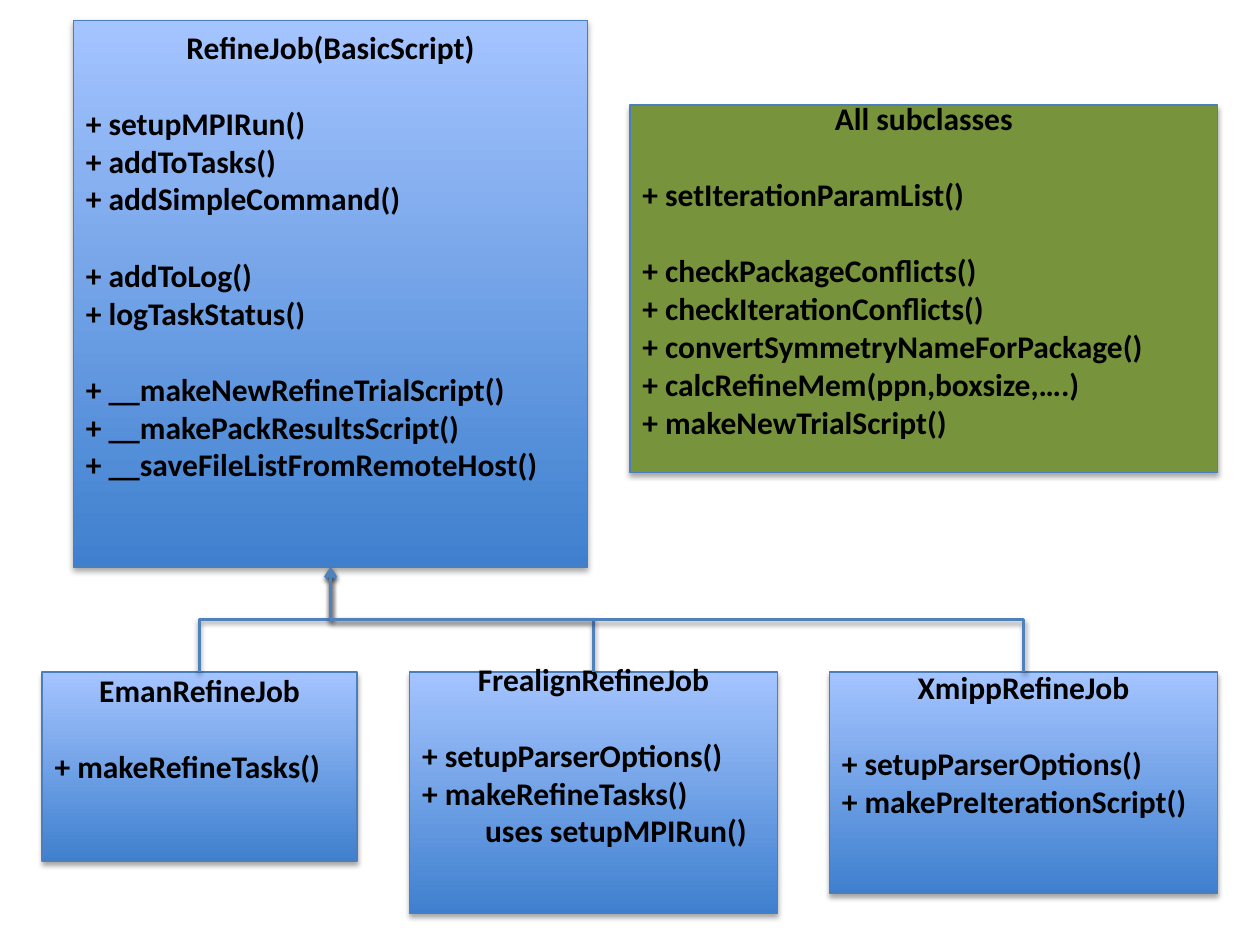
import dataclasses

import lxml.etree
import pptx
import pptx.dml.color
import pptx.enum.shapes
import pptx.enum.text
import pptx.oxml.ns
import pptx.util

Cm = pptx.util.Cm
Pt = pptx.util.Pt
COLOURS = {
    "deep": "3F80CE",
    "pale": "A4C4FF",
    "green": "77933C",
    "border": "4B7EBC",
    "link": "4F81BD",
    "text": "000000",
    "shadow": "000000",
}
FONT = "Calibri"
TEXT_SIZE = Pt(18)
BLANK_LINE = Pt(22)
INSET = Cm(0.13)
TOP_SITE, BOTTOM_SITE = 0, 2


@dataclasses.dataclass(frozen=True)
class ClassBox:
    title: str
    left: float
    top: float
    width: float
    height: float
    groups: tuple[tuple[str, ...], ...]
    lines_below: int = 2
    fill: str = ""


PARENT = ClassBox(
    "RefineJob(BasicScript)", 1.48, 0.42, 10.37, 11.01,
    (
        ("+ setupMPIRun()", "+ addToTasks()", "+ addSimpleCommand()"),
        ("+ addToLog()", "+ logTaskStatus()"),
        (
            "+ __makeNewRefineTrialScript()",
            "+ __makePackResultsScript()",
            "+ __saveFileListFromRemoteHost()",
        ),
    ),
)
CHILD_TOP = 13.55
CHILDREN = (
    ClassBox(
        "FrealignRefineJob", 8.26, CHILD_TOP, 7.41, 4.87,
        (("+ setupParserOptions()", "+ makeRefineTasks()", "\tuses setupMPIRun()"),),
    ),
    ClassBox(
        "EmanRefineJob", 0.85, CHILD_TOP, 6.35, 3.81,
        (("+ makeRefineTasks()",),),
    ),
    ClassBox(
        "XmippRefineJob", 16.72, CHILD_TOP, 7.83, 4.45,
        (("+ setupParserOptions()", "+ makePreIterationScript()"),),
    ),
)
SHARED = ClassBox(
    "All subclasses", 12.7, 2.12, 11.85, 7.41,
    (
        ("+ setIterationParamList()",),
        (
            "+ checkPackageConflicts()",
            "+ checkIterationConflicts()",
            "+ convertSymmetryNameForPackage()",
            "+ calcRefineMem(ppn,boxsize,….)",
            "+ makeNewTrialScript()",
        ),
    ),
    lines_below=1,
    fill="green",
)


def colour(name: str) -> pptx.dml.color.RGBColor:
    return pptx.dml.color.RGBColor.from_string(COLOURS[name])


def add_shadow(item, distance: float, opacity: int) -> None:
    tag = pptx.oxml.ns.qn
    properties = item._element.spPr
    effects = properties.find(tag("a:effectLst"))
    if effects is None:
        effects = lxml.etree.SubElement(properties, tag("a:effectLst"))
    shadow = lxml.etree.SubElement(
        effects, tag("a:outerShdw"), blurRad=str(Pt(3.1)), dist=str(Pt(distance)),
        dir="5400000", rotWithShape="0",
    )
    tint = lxml.etree.SubElement(shadow, tag("a:srgbClr"), val=COLOURS["shadow"])
    lxml.etree.SubElement(tint, tag("a:alpha"), val=str(opacity * 1000))


def write_text(shape, content: ClassBox) -> None:
    frame = shape.text_frame
    frame.word_wrap = True
    frame.vertical_anchor = pptx.enum.text.MSO_ANCHOR.MIDDLE
    frame.margin_top = INSET
    frame.margin_bottom = INSET + content.lines_below * BLANK_LINE
    lines = [content.title] + [line for group in content.groups for line in group]
    starts = {group[0] for group in content.groups}
    frame.text = "\n".join(lines)
    for index, (para, line) in enumerate(zip(frame.paragraphs, lines)):
        align = pptx.enum.text.PP_ALIGN
        para.alignment = align.LEFT if index else align.CENTER
        if line in starts:
            para.space_before = BLANK_LINE
        for span in para.runs:
            span.font.name = FONT
            span.font.size = TEXT_SIZE
            span.font.bold = True
            span.font.color.rgb = colour("text")


def add_class_box(page, content: ClassBox):
    shape = page.shapes.add_shape(
        pptx.enum.shapes.MSO_SHAPE.FLOWCHART_PROCESS,
        Cm(content.left), Cm(content.top), Cm(content.width), Cm(content.height),
    )
    if content.fill:
        shape.fill.solid()
        shape.fill.fore_color.rgb = colour(content.fill)
    else:
        shape.fill.gradient()
        shape.fill.gradient_angle = 90
        for stop, name in zip(shape.fill.gradient_stops, ("deep", "pale")):
            stop.color.rgb = colour(name)
    shape.line.color.rgb = colour("border")
    shape.line.width = Pt(0.75)
    shape.shadow.inherit = False
    add_shadow(shape, 1.8, 35)
    write_text(shape, content)
    return shape


def add_inheritance(page, child, parent) -> None:
    start_x = child.left + child.width // 2
    end_x = parent.left + parent.width // 2
    end_y = parent.top + parent.height
    rise = child.top - end_y
    span = abs(end_x - start_x)
    link = page.shapes.add_connector(
        pptx.enum.shapes.MSO_CONNECTOR.ELBOW, start_x, child.top, end_x, end_y
    )
    link.begin_connect(child, TOP_SITE)
    link.end_connect(parent, BOTTOM_SITE)
    link.left = (start_x + end_x - rise) // 2
    link.top = (child.top + end_y - span) // 2
    link.width, link.height = rise, span
    from_left = start_x < end_x
    frame = link._element.spPr.find(pptx.oxml.ns.qn("a:xfrm"))
    frame.set("rot", str((90 if from_left else 270) * 60000))
    frame.set("flipH", "1" if from_left else "0")
    frame.set("flipV", "1")
    link.line.color.rgb = colour("link")
    link.line.width = Pt(2)
    lxml.etree.SubElement(
        link.line._get_or_add_ln(), pptx.oxml.ns.qn("a:tailEnd"), type="arrow"
    )
    add_shadow(link, 1.6, 38)


def main() -> None:
    deck = pptx.Presentation()
    deck.slide_width, deck.slide_height = Cm(25.4), Cm(19.05)
    page = deck.slides.add_slide(deck.slide_layouts[6])
    parent = add_class_box(page, PARENT)
    children = [add_class_box(page, content) for content in CHILDREN]
    add_class_box(page, SHARED)
    for child in children:
        add_inheritance(page, child, parent)
    deck.save("out.pptx")


if __name__ == "__main__":
    main()
